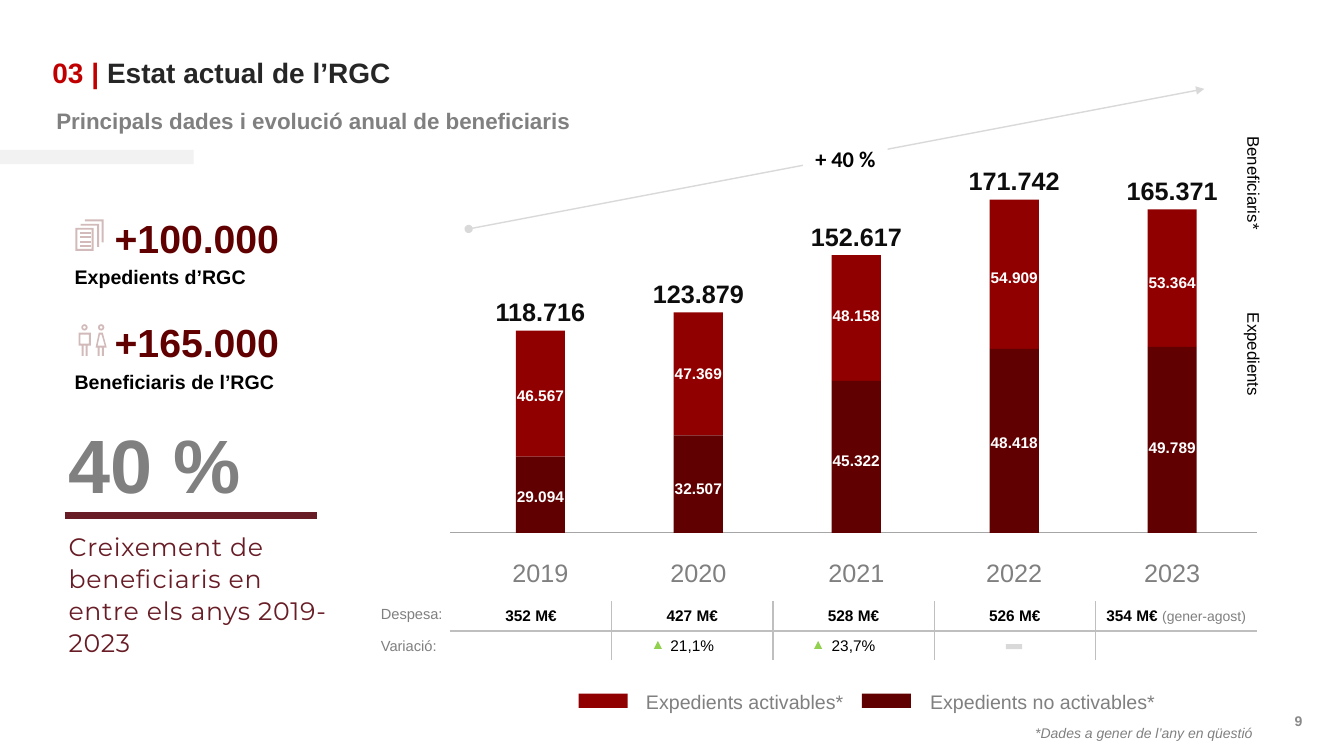
import pptx
import pptx.util
import pptx.dml.color
import pptx.enum.shapes
import pptx.enum.text
import pptx.oxml
import pptx.oxml.ns
import pptx.oxml.xmlchemy

Cm, Pt = pptx.util.Cm, pptx.util.Pt
Rgb = pptx.dml.color.RGBColor.from_string
Kind = pptx.enum.shapes.MSO_SHAPE
Side = pptx.enum.text.PP_ALIGN
Mid = pptx.enum.text.MSO_ANCHOR.MIDDLE
Top = pptx.enum.text.MSO_ANCHOR.TOP
HUES = {
    "red": "C00000", "light": "900000", "dark": "600000", "wine": "681C25",
    "gray": "808080", "page": "898989", "pale": "F2F2F2", "trend": "D9D9D9",
    "axis": "A6A6A6", "grid": "BFBFBF", "icon": "D3BABA", "green": "92D050",
    "ink": "262626", "total": "0D0D0D", "black": "000000", "white": "FFFFFF",
}

deck = pptx.Presentation()
deck.slide_width, deck.slide_height = Cm(33.87), Cm(19.05)
slide = deck.slides.add_slide(deck.slide_layouts[5])
shapes = slide.shapes


def label(x, y, w, h, text, size, hue, bold=False, align=Side.LEFT, anchor=Top):
    box = shapes.add_textbox(Cm(x), Cm(y), Cm(w), Cm(h))
    frame = box.text_frame
    frame.word_wrap = True
    frame.vertical_anchor = anchor
    line = frame.paragraphs[0]
    line.text = text
    line.alignment = align
    font = line.font
    font.name, font.size, font.bold = "Arial", Pt(size), bold
    font.color.rgb = Rgb(HUES[hue])
    return box


def paint(shape, hue):
    """Give a shape a flat fill with neither line nor shadow."""
    shape.fill.solid()
    shape.fill.fore_color.rgb = Rgb(HUES[hue])
    shape.line.fill.background()
    shape.shadow.inherit = False


# Heading
title = shapes.title
title.left, title.top, title.width, title.height = Cm(1.32), Cm(1.12), Cm(31.34), Cm(1.4)
frame = title.text_frame
frame.auto_size = pptx.enum.text.MSO_AUTO_SIZE.NONE
frame.vertical_anchor = Mid
frame.margin_left = 0
head = frame.paragraphs[0]
head.alignment = Side.LEFT
head.font.name, head.font.size, head.font.bold = "Arial", Pt(20), True
for text, hue in (("03 | ", "red"), ("Estat actual de l’RGC", "ink")):
    run = head.add_run()
    run.text = text
    run.font.color.rgb = Rgb(HUES[hue])
label(1.17, 2.64, 23.72, 0.79, "Principals dades i evolució anual de beneficiaris", 16, "gray", True, anchor=Mid)
label(32.18, 17.65, 0.89, 1.02, "9", 10, "page", True, Side.RIGHT, Mid)

# Key figures
for y, text, gap, note in (
    (5.59, "+100.000", 1.02, "Expedients d’RGC"),
    (8.23, "+165.000", 1.04, "Beneficiaris de l’RGC"),
):
    label(2.64, y, 7.6, 0.79, text, 28, "dark", True, anchor=Mid)
    label(1.63, y + gap, 7.6, 0.7, note, 14, "black", True, anchor=Mid)

growth = label(1.63, 10.41, 6.78, 6.27, "40 %", 54, "gray", True, anchor=Mid).text_frame
growth.margin_left = growth.margin_right = Cm(0.1)
growth.margin_top = growth.margin_bottom = Cm(0.1)
growth.paragraphs[0].space_after = Pt(15)
claim = growth.add_paragraph()
claim.text = "Creixement de beneficiaris en entre els anys 2019-2023"
claim.line_spacing = 1.06
claim.font.name, claim.font.size, claim.font.bold = "Montserrat", Pt(18), False
claim.font.color.rgb = Rgb(HUES["wine"])
claim.runs[0].font._element.set("spc", "50")

# Icons: stacked pages, man and woman
outlines = [
    [[(1.9, 5.74), (2.36, 5.74), (2.36, 6.32), (1.9, 6.32)],
     [(1.95, 5.79), (2.31, 5.79), (2.31, 6.27), (1.95, 6.27)]],
    [[(1.98, 8.38), (2.29, 8.38), (2.29, 8.71), (2.21, 8.71), (2.21, 8.97), (2.16, 8.97),
      (2.16, 8.71), (2.11, 8.71), (2.11, 8.97), (2.06, 8.97), (2.06, 8.71), (1.98, 8.71)],
     [(2.03, 8.43), (2.24, 8.43), (2.24, 8.66), (2.03, 8.66)]],
    [[(2.49, 8.38), (2.59, 8.38), (2.69, 8.76), (2.62, 8.76), (2.62, 8.97), (2.57, 8.97),
      (2.57, 8.76), (2.51, 8.76), (2.51, 8.97), (2.46, 8.97), (2.46, 8.76), (2.41, 8.76)],
     [(2.46, 8.71), (2.52, 8.43), (2.56, 8.43), (2.64, 8.71)]],
]
for x, y in ((2.03, 5.64), (2.14, 5.53)):
    outlines.append([[(x, y), (x + 0.47, y), (x + 0.47, y + 0.58), (x + 0.42, y + 0.58),
                      (x + 0.42, y + 0.05), (x, y + 0.05)]])
for step in range(4):
    y = 5.85 + 0.11 * step
    outlines.append([[(2.01, y), (2.29, y), (2.29, y + 0.05), (2.01, y + 0.05)]])
for loops in outlines:
    pen = shapes.build_freeform(Cm(loops[0][0][0]), Cm(loops[0][0][1]))
    for spot, loop in enumerate(loops):
        points = [(Cm(x), Cm(y)) for x, y in loop]
        if spot:
            pen.move_to(*points[0])
        pen.add_line_segments(points[1:], close=True)
    paint(pen.convert_to_shape(), "icon")
for x in (2.05, 2.47):
    ring = shapes.add_shape(Kind.DONUT, Cm(x), Cm(8.17), Cm(0.16), Cm(0.16))
    ring.adjustments[0] = 0.28
    paint(ring, "icon")

# Lines: rule under the figure, axis, trend
for x, y, right, end, hue, width in (
    (1.63, 12.98, 7.98, 12.98, "wine", 5),
    (11.35, 13.43, 31.67, 13.43, "axis", 0.75),
    (11.81, 5.77, 30.35, 2.24, "trend", 1),
):
    line = shapes.add_connector(pptx.enum.shapes.MSO_CONNECTOR.STRAIGHT, Cm(x), Cm(y), Cm(right), Cm(end))
    line.line.color.rgb = Rgb(HUES[hue])
    line.line.width = Pt(width)
    if hue == "trend":
        stroke = line.line._get_or_add_ln()
        for name, tip in (("a:headEnd", "oval"), ("a:tailEnd", "triangle")):
            mark = pptx.oxml.xmlchemy.OxmlElement(name)
            mark.set("type", tip)
            stroke.append(mark)
    line._element.spPr.append(pptx.oxml.xmlchemy.OxmlElement("a:effectLst"))

rise = label(20.24, 3.43, 2.13, 1.09, "+ 40 %", 16, "black", True, Side.CENTER, Mid)
rise.fill.solid()
rise.fill.fore_color.rgb = Rgb(HUES["white"])
rise.text_frame.margin_top = rise.text_frame.margin_bottom = Cm(0.25)
rise.text_frame.paragraphs[0].line_spacing = 1.06
rise.text_frame.paragraphs[0].font.name = "Calibri"

# Stacked columns: top and split of each bar, then the heights of its two labels
BASE, WIDE = 13.43, 1.24
years = (
    ("2019", "118.716", "46.567", "29.094", 8.33, 11.51, 9.6, 12.14),
    ("2020", "123.879", "47.369", "32.507", 7.87, 10.97, 9.04, 11.94),
    ("2021", "152.617", "48.158", "45.322", 6.43, 9.6, 7.59, 11.25),
    ("2022", "171.742", "54.909", "48.418", 5.03, 8.79, 6.63, 10.8),
    ("2023", "165.371", "53.364", "49.789", 5.28, 8.74, 6.76, 10.92),
)
for spot, (year, total, upper, lower, top, split, high, low) in enumerate(years):
    mid = 13.62 + 3.98 * spot
    for y, end, hue in ((top, split, "light"), (split, BASE, "dark")):
        paint(shapes.add_shape(Kind.RECTANGLE, Cm(mid - WIDE / 2), Cm(y), Cm(WIDE), Cm(end - y)), hue)
    for y, text in ((high, upper), (low, lower)):
        label(mid - 1.42, y, 2.84, 0.66, text, 11, "white", True, Side.CENTER)
    label(mid - 1.42, top - 0.98, 2.84, 0.94, total, 18, "total", True, Side.CENTER)
    label(mid - 1.66, 13.92, 3.32, 0.94, year, 18, "gray", align=Side.CENTER)

for y, text in ((4.29, "Beneficiaris*"), (8.74, "Expedients")):
    label(30.12, y, 2.97, 0.76, text, 12, "black").rotation = 90

# Spending table
for y, text in ((15.11, "Despesa:"), (15.93, "Variació:")):
    label(9.35, y, 2.21, 0.74, text, 10.5, "gray")
rows = (
    ("352 M€", "427 M€", "528 M€", "526 M€", "354 M€ "),
    ("", "21,1%", "23,7%", "", ""),
)
table = shapes.add_table(2, 5, Cm(11.35), Cm(15.16), Cm(20.32), Cm(1.48)).table
table.first_row = table.horz_banding = False
for r, row in enumerate(rows):
    for c, text in enumerate(row):
        cell = table.cell(r, c)
        cell.margin_top = cell.margin_bottom = 0
        cell.vertical_anchor = Mid
        line = cell.text_frame.paragraphs[0]
        line.alignment = Side.CENTER
        line.font.name, line.font.size, line.font.bold = "Arial", Pt(11), r == 0
        line.font.color.rgb = Rgb(HUES["black"])
        if text:
            line.add_run().text = text
        if (r, c) == (0, 4):
            note = line.add_run()
            note.text = "(gener-agost)"
            note.font.size, note.font.bold = Pt(10), False
            note.font.color.rgb = Rgb(HUES["gray"])
        sides = (("L", c > 0), ("R", c < 4), ("T", r > 0), ("B", r < 1))
        for side in (side for side, inner in sides if inner):
            cell._tc.get_or_add_tcPr().append(pptx.oxml.parse_xml(
                f'<a:ln{side} {pptx.oxml.ns.nsdecls("a")} w="12700"><a:solidFill>'
                f'<a:srgbClr val="{HUES["grid"]}"/></a:solidFill></a:ln{side}>'))
        cell.fill.solid()
        cell.fill.fore_color.rgb = Rgb(HUES["white"])

# Plain marks: side band, legend keys, change signs
for kind, x, y, w, h, hue in (
    (Kind.RECTANGLE, 0, 3.78, 4.88, 0.36, "pale"),
    (Kind.RECTANGLE, 14.58, 17.48, WIDE, 0.36, "light"),
    (Kind.RECTANGLE, 21.72, 17.48, WIDE, 0.36, "dark"),
    (Kind.ISOSCELES_TRIANGLE, 16.48, 16.15, 0.2, 0.2, "green"),
    (Kind.ISOSCELES_TRIANGLE, 20.52, 16.15, 0.2, 0.2, "green"),
    (Kind.RECTANGLE, 25.35, 16.23, 0.41, 0.13, "trend"),
):
    paint(shapes.add_shape(kind, Cm(x), Cm(y), Cm(w), Cm(h)), hue)
for x, text in ((16.03, "Expedients activables*"), (23.19, "Expedients no activables*")):
    label(x, 17.25, 6.45, 0.76, text, 14, "gray")

source = label(26.09, 17.91, 5.92, 1.12, "*Dades a gener de l’any en qüestió", 10, "gray", anchor=Mid).text_frame
source.margin_left = source.margin_right = source.margin_top = source.margin_bottom = 0
source.paragraphs[0].font.italic = True

deck.save("out.pptx")
